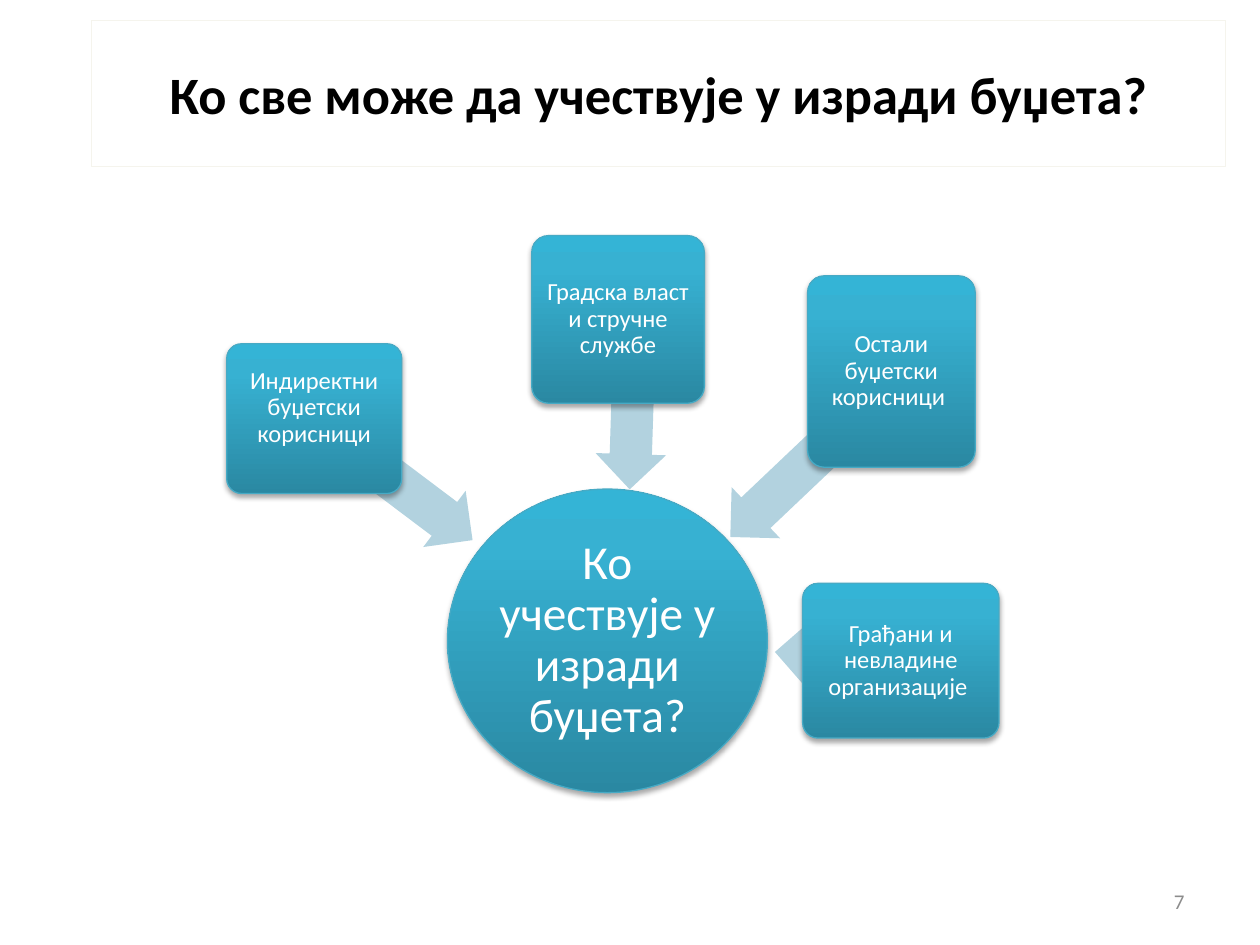
from lxml import etree
from pptx import Presentation
from pptx.dml.color import RGBColor
from pptx.enum.shapes import MSO_SHAPE
from pptx.enum.text import MSO_ANCHOR, PP_ALIGN
from pptx.oxml import parse_xml
from pptx.oxml.ns import nsdecls, qn
from pptx.util import Cm, Pt

RECTANGLE = MSO_SHAPE.RECTANGLE
ELLIPSE = MSO_SHAPE.OVAL
ROUNDED = MSO_SHAPE.ROUNDED_RECTANGLE
LEFT_ARROW = MSO_SHAPE.LEFT_ARROW
MIDDLE = MSO_ANCHOR.MIDDLE
CENTER = PP_ALIGN.CENTER
RIGHT = PP_ALIGN.RIGHT

FONT = "Calibri"
COLORS = {
    "title": "000000",
    "title_line": "F5F4ED",
    "number": "8C8C8C",
    "node_text": "FFFFFF",
    "node_line": "46AAC5",
    "node_dark": "2A88A2",
    "node_mid": "37B1D2",
    "node_light": "34B4D6",
    "arrow": "B2D2DF",
    "shadow": "000000",
}
NODE_STOPS = [(0, "node_dark"), (80, "node_mid"), (100, "node_light")]
ARROW_HEIGHT = 1.42

PARTICIPANTS = [
    {"text": "Индиректни буџетски корисници", "box": (0, 2.18, 3.53, 3.02),
     "arrow": (1.35, 4.22, 4.01), "angle": 217, "bottom": 0.52},
    {"text": "Градска власт и стручне службе", "box": (6.15, 0, 3.48, 3.38),
     "arrow": (6.56, 2.79, 3.23), "angle": 271.8, "bottom": 0.08},
    {"text": "Остали буџетски корисници ", "box": (11.71, 0.81, 3.38, 3.86),
     "arrow": (9.5, 3.73, 4.75), "angle": 316.5, "bottom": 0.08},
    {"text": "Грађани и невладине организације ", "box": (11.61, 7.01, 3.96, 3.12),
     "arrow": (11.05, 7.77, 2.54), "angle": 3.9, "bottom": 0.08},
]


def rgb(name):
    """Return the named colour."""
    return RGBColor.from_string(COLORS[name])


def add_shape(page, kind, box):
    """Add a shadowless shape in a box of centimetres."""
    shape = page.shapes.add_shape(kind, *(Cm(length) for length in box))
    shape.shadow.inherit = False
    return shape


def write_text(shape, text, size, color, align=CENTER, bold=False):
    """Write one vertically centred paragraph into a shape."""
    frame = shape.text_frame
    frame.word_wrap = True
    frame.vertical_anchor = MIDDLE
    para = frame.paragraphs[0]
    para.text = text
    para.alignment = align
    para.font.name = FONT
    para.font.size = Pt(size)
    para.font.bold = bold
    para.font.color.rgb = rgb(color)
    return frame


def style_node(shape):
    """Give a node its gradient, outline and soft shadow."""
    shape.line.color.rgb = rgb("node_line")
    shape.line.width = Pt(0.75)
    stops = "".join(
        f'<a:gs pos="{position * 1000}"><a:srgbClr val="{COLORS[name]}"/></a:gs>'
        for position, name in NODE_STOPS)
    gradient = parse_xml(
        f'<a:gradFill {nsdecls("a")} rotWithShape="1"><a:gsLst>{stops}</a:gsLst>'
        '<a:lin ang="16200000" scaled="0"/></a:gradFill>')
    properties = shape.element.spPr
    properties.find(qn("a:prstGeom")).addnext(gradient)
    shadow = etree.SubElement(
        properties.find(qn("a:effectLst")), qn("a:outerShdw"),
        blurRad=str(Pt(3.1)), dist=str(Pt(1.8)), dir="5400000", rotWithShape="0")
    color = etree.SubElement(shadow, qn("a:srgbClr"), val=COLORS["shadow"])
    etree.SubElement(color, qn("a:alpha"), val="35000")


def add_node(page, kind, box, text, size, inset, bottom):
    """Add a styled node with its label."""
    node = add_shape(page, kind, box)
    style_node(node)
    if kind == ROUNDED:
        node.adjustments[0] = 0.1
    frame = write_text(node, text, size, "node_text")
    frame.margin_left = frame.margin_right = frame.margin_top = Cm(inset)
    frame.margin_bottom = Cm(bottom)
    frame.paragraphs[0].line_spacing = 0.9


def add_arrow(page, box, angle):
    """Add a block arrow turned towards the hub."""
    arrow = add_shape(page, LEFT_ARROW, box)
    arrow.adjustments[0] = 0.6
    arrow.adjustments[1] = 0.5
    arrow.rotation = angle
    arrow.fill.solid()
    arrow.fill.fore_color.rgb = rgb("arrow")
    arrow.line.fill.background()


def add_title(page, box):
    """Add the outlined slide title."""
    title = add_shape(page, RECTANGLE, box)
    title.fill.background()
    title.line.color.rgb = rgb("title_line")
    title.line.width = Pt(0.75)
    write_text(title, "Ко све може да учествује у изради буџета?", 30, "title", bold=True)


def add_diagram(page, left, top):
    """Add the hub and its participants from the given corner."""
    add_node(page, ELLIPSE, (left + 4.45, top + 5.11, 6.45, 6.12),
             "Ко учествује у изради буџета?", 27, 0.05, 0.05)
    for participant in PARTICIPANTS:
        x, y, length = participant["arrow"]
        add_arrow(page, (left + x, top + y, length, ARROW_HEIGHT), participant["angle"])
        x, y, width, height = participant["box"]
        add_node(page, ROUNDED, (left + x, top + y, width, height),
                 participant["text"], 14, 0.08, participant["bottom"])


def add_page_number(page, box):
    """Add the page number."""
    number = page.shapes.add_textbox(*(Cm(length) for length in box))
    write_text(number, "7", 12, "number", align=RIGHT)


def main():
    """Build and save the deck."""
    deck = Presentation()
    deck.slide_width, deck.slide_height = Cm(25.4), Cm(19.05)
    page = deck.slides.add_slide(deck.slide_layouts[6])
    add_title(page, (1.85, 0.41, 22.86, 2.95))
    add_page_number(page, (18.21, 17.65, 5.92, 1.02))
    add_diagram(page, 4.57, 4.75)
    deck.save("out.pptx")


if __name__ == "__main__":
    main()
